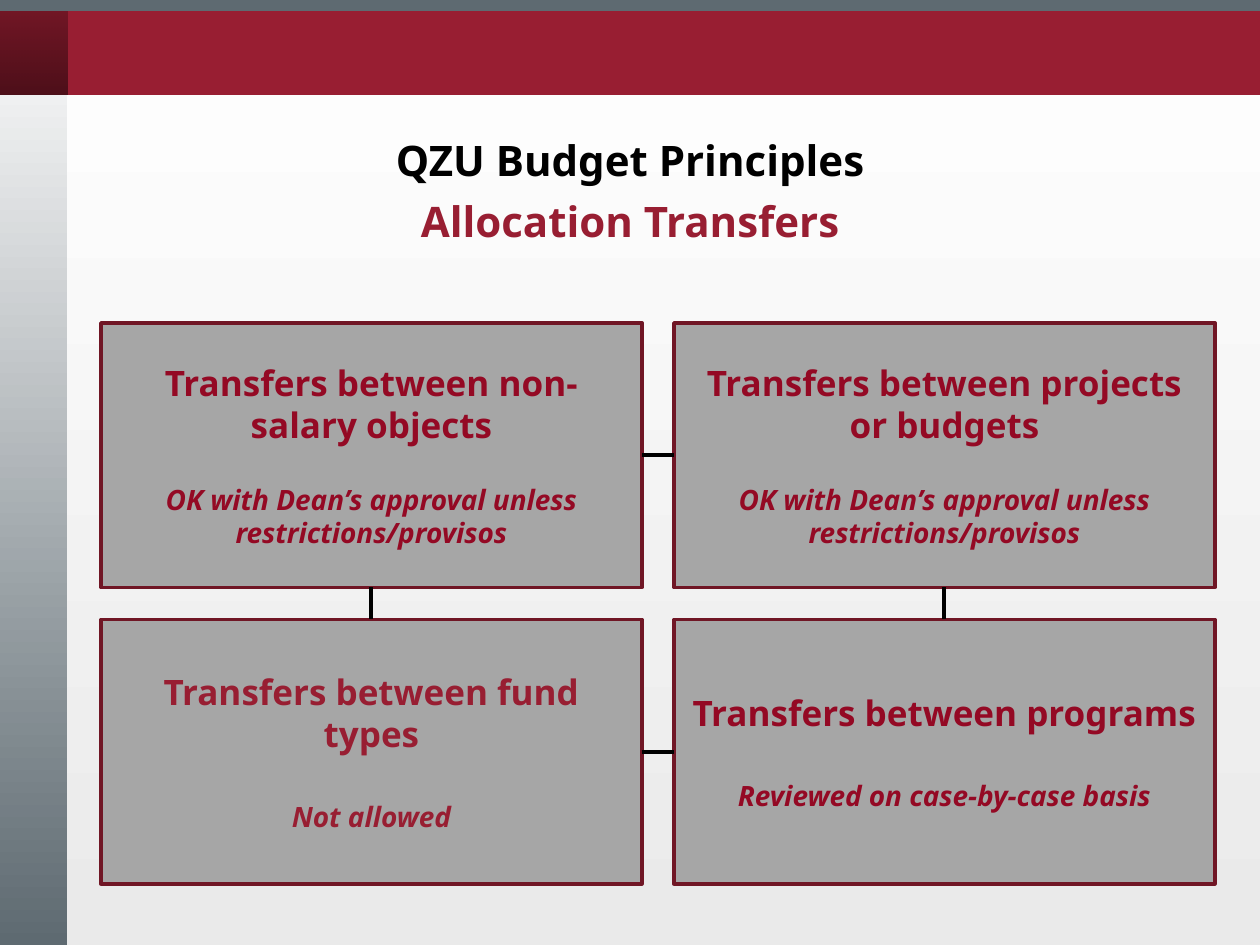
from dataclasses import dataclass
from itertools import product

from pptx import Presentation
from pptx.dml.color import RGBColor
from pptx.enum.shapes import MSO_CONNECTOR as LINE, MSO_SHAPE as SHAPE
from pptx.enum.text import MSO_ANCHOR as ANCHOR, PP_ALIGN as ALIGN
from pptx.oxml.ns import qn
from pptx.util import Emu, Pt
from lxml.etree import SubElement

PX = 914400 / 126  # EMU in one px
SLIDE_W, SLIDE_H = 1260, 945


@dataclass(frozen=True)
class Theme:
    font: str = "Noto Sans"
    black: str = "000000"
    white: str = "FFFFFF"
    paper: str = "EAEAEA"
    slate: str = "5E6A71"
    crimson: str = "981E32"
    card_text: str = "940924"
    card_fill: str = "A6A6A6"
    card_edge: str = "701625"
    title_size: int = 24
    rule_size: int = 20
    note_size: int = 16
    edge_width: float = 2
    link_width: float = 2.25


THEME = Theme()


def px(length):
    return Emu(round(length * PX))


def rgb(color):
    return RGBColor.from_string(color)


def fill_gradient(fill, bottom, top, alphas=()):
    """Blend upwards from the bottom colour to the top one."""
    fill.gradient()
    fill.gradient_angle = 90
    stops = list(fill.gradient_stops)
    for stop, color, position in zip(stops, (bottom, top), (0, 1)):
        stop.color.rgb = rgb(color)
        stop.position = position
    for color_xml, alpha in zip(fill._xPr.iter(qn("a:srgbClr")), alphas):
        SubElement(color_xml, qn("a:alpha"), val=str(alpha * 1000))


def add_box(slide, box, color=None, edge=None):
    shape = slide.shapes.add_shape(SHAPE.RECTANGLE, *map(px, box))
    shape.shadow.inherit = False
    if color:
        shape.fill.solid()
        shape.fill.fore_color.rgb = rgb(color)
    if edge:
        shape.line.color.rgb = rgb(edge)
        shape.line.width = Pt(THEME.edge_width)
    else:
        shape.line.fill.background()
    return shape


def set_frame(frame, anchor, inset_x, inset_y):
    frame.word_wrap = True
    frame.vertical_anchor = anchor
    frame.margin_left = frame.margin_right = px(inset_x)
    frame.margin_top = frame.margin_bottom = px(inset_y)


def write(paragraph, text, *, size, color, italic=False, before=0, spacing=1.0):
    paragraph.alignment = ALIGN.CENTER
    paragraph.line_spacing = spacing
    paragraph.space_before = Pt(before)
    run = paragraph.add_run()
    run.text = text
    run.font.name = THEME.font
    run.font.size = Pt(size)
    run.font.bold = True
    run.font.italic = italic
    run.font.color.rgb = rgb(color)


def add_link(slide, x1, y1, x2, y2):
    link = slide.shapes.add_connector(LINE.STRAIGHT, *map(px, (x1, y1, x2, y2)))
    link.line.color.rgb = rgb(THEME.black)
    link.line.width = Pt(THEME.link_width)
    SubElement(link._element.spPr, qn("a:effectLst"))


def add_backdrop(slide, width, height):
    strip, band, side = 11, 84, 67
    fill_gradient(slide.background.fill, THEME.paper, THEME.white)
    # Sidebar, header band, their shaded corner, and the top strip
    sidebar = add_box(slide, (0, 0, side, height))
    fill_gradient(sidebar.fill, THEME.slate, THEME.white)
    add_box(slide, (0, strip, width, band), THEME.crimson)
    corner = add_box(slide, (0, strip, side, band))
    fill_gradient(corner.fill, THEME.black, THEME.black, alphas=(50, 25))
    add_box(slide, (0, 0, width, strip), THEME.slate)


def add_title(slide, box, heading, topic):
    frame = slide.shapes.add_textbox(*map(px, box)).text_frame
    set_frame(frame, ANCHOR.BOTTOM, 63, 6)
    write(frame.paragraphs[0], heading, size=THEME.title_size,
          color=THEME.black, spacing=0.9)
    write(frame.add_paragraph(), topic, size=THEME.title_size,
          color=THEME.crimson, before=9, spacing=0.9)


def add_card(slide, box, rule, note, color, note_gap):
    frame = add_box(slide, box, THEME.card_fill, THEME.card_edge).text_frame
    set_frame(frame, ANCHOR.MIDDLE, 16, 6)
    write(frame.paragraphs[0], rule, size=THEME.rule_size, color=color)
    write(frame.add_paragraph(), note, size=THEME.note_size, color=color,
          italic=True, before=note_gap)


def add_transfer_grid(slide, box, cards, gap):
    left, top, width, height = box
    card_w, card_h = (width - gap) / 2, (height - gap) / 2
    xs = [left, left + card_w + gap]
    ys = [top, top + card_h + gap]
    for (y, x), card in zip(product(ys, xs), cards):
        add_card(slide, (x, y, card_w, card_h), *card)
    # Links across the gaps between neighbours
    for y in ys:
        middle = y + card_h / 2
        add_link(slide, xs[0] + card_w, middle, xs[1], middle)
    for x in xs:
        centre = x + card_w / 2
        add_link(slide, centre, ys[0] + card_h, centre, ys[1])


def main():
    deck = Presentation()
    deck.slide_width, deck.slide_height = px(SLIDE_W), px(SLIDE_H)
    slide = deck.slides.add_slide(deck.slide_layouts[6])
    approval = "OK with Dean’s approval unless restrictions/provisos"
    cards = [
        ("Transfers between non-salary objects", approval, THEME.card_text, 21),
        ("Transfers between projects or budgets", approval, THEME.card_text, 21),
        ("Transfers between fund types", "Not allowed", THEME.crimson, 26),
        ("Transfers between programs", "Reviewed on case-by-case basis",
         THEME.card_text, 26),
    ]
    add_backdrop(slide, SLIDE_W, SLIDE_H)
    add_title(slide, (126, 134, 1008, 119),
              "QZU Budget Principles", "Allocation Transfers")
    add_transfer_grid(slide, (101, 323, 1114, 561), cards, gap=32)
    deck.save("out.pptx")


if __name__ == "__main__":
    main()
